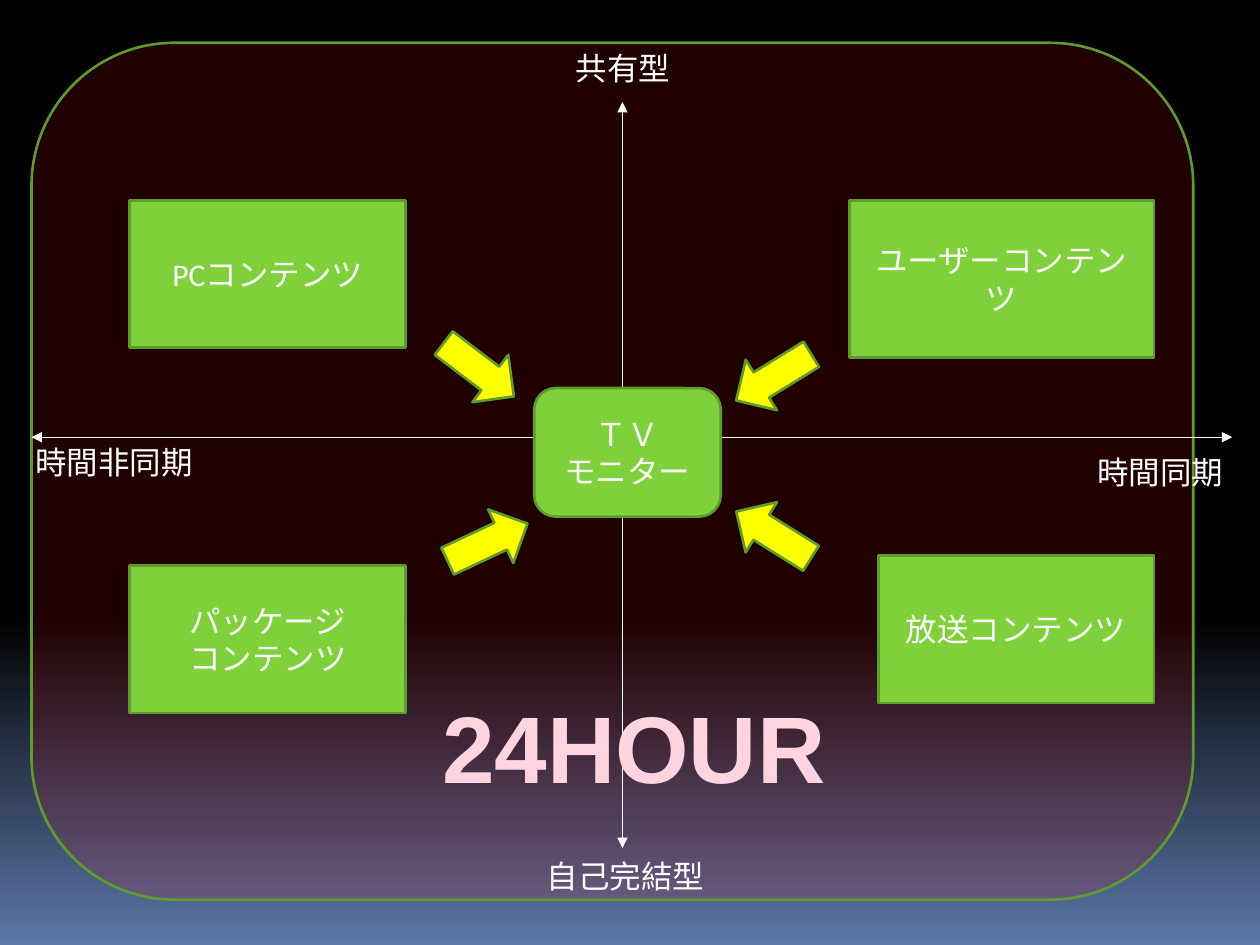
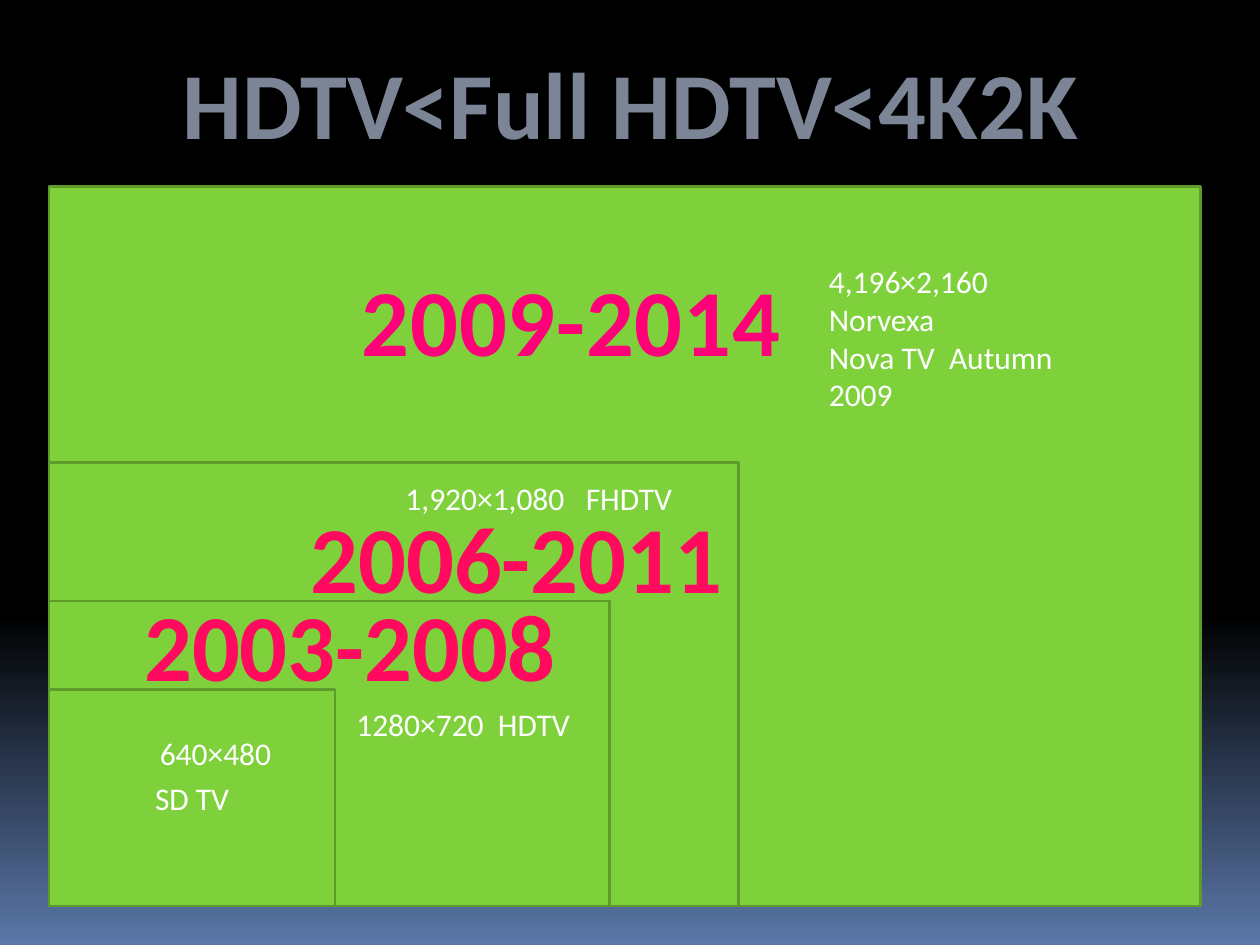
import pptx
import pptx.util
import pptx.dml.color
import pptx.enum.shapes
import pptx.enum.text
import pptx.oxml.ns
import lxml.etree

Inches = pptx.util.Inches
Kind = pptx.enum.shapes.MSO_SHAPE
Align = pptx.enum.text.PP_ALIGN
qn = pptx.oxml.ns.qn

GREEN, EDGE, WHITE, YELLOW = "7FD13B", "5E9B2C", "FFFFFF", "FFFF00"
PINK, ROSE, MAGENTA, SLATE = "FFD4DE", "FF0A5E", "FF0079", "7B8596"


def color(code):
    return pptx.dml.color.RGBColor.from_string(code)


class Deck:
    """Holds the shared style and the current slide."""

    def __init__(self):
        self.file = pptx.Presentation()
        self.file.slide_width = Inches(10)
        self.file.slide_height = Inches(7.5)

    def page(self):
        self.slide = self.file.slides.add_slide(self.file.slide_layouts[6])
        fill = self.slide.background.fill
        fill.gradient()
        fill.gradient_angle = 270
        for stop, (place, code) in zip(fill.gradient_stops,
                                       [(0.65, "000000"), (1, "5B77A8")]):
            stop.position = place
            stop.color.rgb = color(code)

    def text(self, frame, lines, size=18, font="Calibri", ink=WHITE,
             bold=False, align=Align.LEFT, space=0):
        """Each line is a string or a list of runs; a number is a wide gap in points."""
        for n, line in enumerate(lines):
            para = frame.paragraphs[0] if n == 0 else frame.add_paragraph()
            para.alignment = align
            for part in [line] if isinstance(line, str) else line:
                gap = not isinstance(part, str)
                run = para.add_run()
                run.text = " " if gap else part
                run.font.size = pptx.util.Pt(size)
                run.font.name = font
                run.font.bold = bold
                run.font.color.rgb = color(ink)
                track = part if gap else space
                if track:
                    run.font._element.set("spc", str(int(track * 100)))

    def shape(self, kind, left, top, width, height, lines=(), fill=GREEN,
              alpha=None, turn=0):
        item = self.slide.shapes.add_shape(
            kind, Inches(left), Inches(top), Inches(width), Inches(height))
        item.shadow.inherit = False
        item.rotation = turn
        item.fill.solid()
        item.fill.fore_color.rgb = color(fill)
        item.line.color.rgb = color(EDGE)
        item.line.width = pptx.util.Pt(1.5)
        if alpha:
            tone = item._element.spPr.find(qn("a:solidFill"))[0]
            lxml.etree.SubElement(tone, qn("a:alpha"), val=str(alpha * 1000))
        item.text_frame.vertical_anchor = pptx.enum.text.MSO_ANCHOR.MIDDLE
        self.text(item.text_frame, lines, align=Align.CENTER)

    def label(self, left, top, width, height, lines, wrap=False, **style):
        box = self.slide.shapes.add_textbox(
            Inches(left), Inches(top), Inches(width), Inches(height))
        box.text_frame.word_wrap = wrap
        box.text_frame.auto_size = pptx.enum.text.MSO_AUTO_SIZE.SHAPE_TO_FIT_TEXT
        self.text(box.text_frame, lines, **style)

    def banner(self, left, top, width, text, ink, **style):
        self.label(left, top, width, 1.01, [text], size=54, ink=ink, bold=True,
                   align=Align.CENTER, **style)

    def axis(self, *ends):
        line = self.slide.shapes.add_connector(
            pptx.enum.shapes.MSO_CONNECTOR.STRAIGHT, *map(Inches, ends))
        line.line.color.rgb = color(WHITE)
        line.line.width = pptx.util.Pt(0.75)
        stroke = line._element.spPr.find(qn("a:ln"))
        for tip in ("a:headEnd", "a:tailEnd"):
            lxml.etree.SubElement(stroke, qn(tip), type="triangle")
        lxml.etree.SubElement(line._element.spPr, qn("a:effectLst"))


def content_map(deck):
    deck.page()
    deck.shape(Kind.ROUNDED_RECTANGLE, 0.25, 0.34, 9.22, 6.8,
               fill="FF0000", alpha=13)

    # Content types
    for left, top, width, height, lines in [
            (1.03, 1.59, 2.19, 1.17, ["PCコンテンツ"]),
            (6.74, 1.59, 2.42, 1.25, ["ユーザーコンテンツ"]),
            (6.97, 4.41, 2.19, 1.17, ["放送コンテンツ"]),
            (1.03, 4.49, 2.19, 1.17, ["パッケージ", "コンテンツ"])]:
        deck.shape(Kind.RECTANGLE, left, top, width, height, lines)

    # Axes and their ends
    deck.axis(4.94, 0.81, 4.94, 6.73)
    deck.axis(0.25, 3.47, 9.78, 3.47)
    for left, top, width, text in [
            (0.18, 3.47, 1.46, "時間非同期"), (8.61, 3.55, 1.21, "時間同期"),
            (4.24, 6.75, 1.46, "自己完結型"), (4.47, 0.34, 0.96, "共有型")]:
        deck.label(left, top, width, 0.4, [text], font="Arial")

    # Monitor and the arrows towards it
    deck.shape(Kind.ROUNDED_RECTANGLE, 4.24, 3.08, 1.48, 1.02,
               ["ＴＶ", "モニター"])
    for left, top, turn in [(3.45, 2.7, 37.2), (3.52, 4.07, 334.8),
                            (5.79, 2.76, 148.4), (5.79, 4.01, 212)]:
        deck.shape(Kind.RIGHT_ARROW, left, top, 0.7, 0.47,
                   fill=YELLOW, turn=turn)
    deck.banner(3.38, 5.42, 3.3, "24HOUR", PINK, font="Arial", wrap=True)


def screen_sizes(deck):
    deck.page()
    deck.banner(1.02, 0.31, 7.97, "HDTV<Full HDTV<4K2K", SLATE)

    # Nested screens share the lower left corner
    base = 7.19
    for width, height, lines in [(9.14, 5.71, []), (5.47, 3.52, []),
                                 (4.45, 2.42, []), (2.27, 1.72, ["SD TV"])]:
        deck.shape(Kind.RECTANGLE, 0.39, base - height, width, height, lines)

    # Resolutions
    for left, top, width, height, lines in [
            (6.48, 2.03, 2.48, 1.01,
             ["4,196×2,160", "Norvexa", ["Nova TV", 4, "Autumn", 4, "2009"]]),
            (3.12, 3.75, 2.5, 0.4, [["1,920×1,080", 8, "FHDTV"]]),
            (2.73, 5.55, 2.09, 0.4, [["1280×720", 4, "HDTV"]]),
            (1.17, 5.78, 1.24, 0.4, ["640×480"])]:
        deck.label(left, top, width, height, lines)

    # Years
    deck.banner(2.73, 2.03, 3.61, "2009-2014", MAGENTA, space=0.5)
    deck.banner(2.34, 3.91, 3.52, "2006-2011", ROSE)
    deck.banner(1.02, 4.61, 3.52, "2003-2008", ROSE)


def main():
    deck = Deck()
    content_map(deck)
    screen_sizes(deck)
    deck.file.save("out.pptx")


if __name__ == "__main__":
    main()
